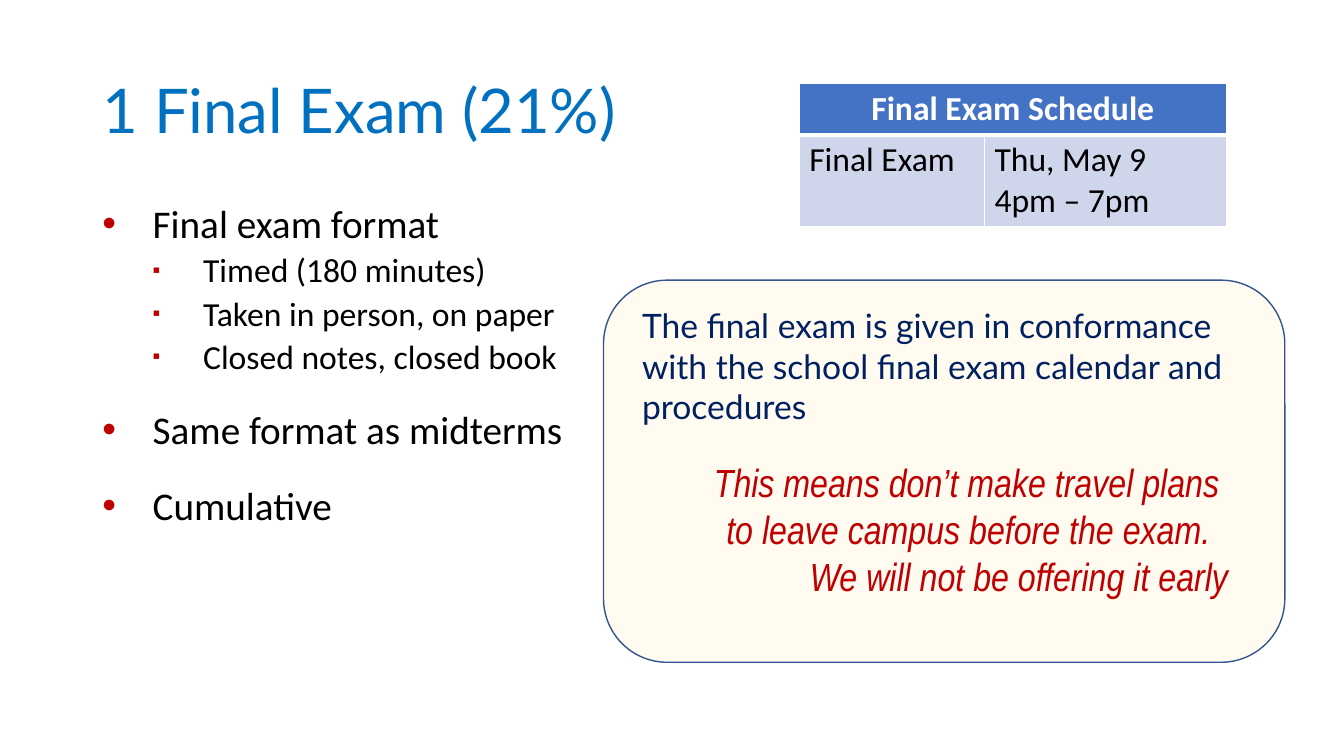
import pptx
import pptx.util
import pptx.dml.color
import pptx.enum.shapes
import pptx.enum.text
import pptx.oxml
import pptx.oxml.ns
import lxml.etree

Cm, Pt = pptx.util.Cm, pptx.util.Pt
RGBColor = pptx.dml.color.RGBColor
ALIGN = pptx.enum.text.PP_ALIGN
ANCHOR = pptx.enum.text.MSO_ANCHOR
AUTO_SIZE = pptx.enum.text.MSO_AUTO_SIZE
qn = pptx.oxml.ns.qn

BLUE = RGBColor(0x00, 0x70, 0xC0)
NAVY = RGBColor(0x00, 0x20, 0x60)
RED = RGBColor(0xC0, 0x00, 0x00)
BLACK = RGBColor(0x00, 0x00, 0x00)
WHITE = RGBColor(0xFF, 0xFF, 0xFF)
HEADER_FILL = RGBColor(0x44, 0x72, 0xC4)
ROW_FILL = RGBColor(0xCF, 0xD5, 0xEA)
CREAM = RGBColor(0xFF, 0xF2, 0xCC)
OUTLINE = RGBColor(0x32, 0x54, 0x91)


def write(tf, lines, color, font, para={}):
    """Fill a text frame with one paragraph per line, all in one format."""
    for i, line in enumerate(lines):
        p = tf.paragraphs[0] if i == 0 else tf.add_paragraph()
        for name, value in para.items():
            setattr(p, name, value)
        r = p.add_run()
        r.text = line
        r.font.color.rgb = color
        for name, value in font.items():
            setattr(r.font, name, value)


def add(parent, tag, **attrs):
    """Append a drawing element to an XML parent."""
    return lxml.etree.SubElement(parent, qn(tag), attrs)


prs = pptx.Presentation()
prs.slide_width, prs.slide_height = Cm(33.87), Cm(19.05)
s = prs.slides.add_slide(prs.slide_layouts[5])

# Title
title = s.shapes.title
title.left, title.top, title.width, title.height = Cm(2.33), Cm(1.02), Cm(16.33), Cm(3.68)
tf = title.text_frame
tf.auto_size = AUTO_SIZE.NONE
tf.vertical_anchor = ANCHOR.MIDDLE
write(tf, ["1 Final Exam (21%)"], BLUE, {"name": "Lato", "size": Pt(44)},
      {"alignment": ALIGN.LEFT, "line_spacing": 0.9})

# Bulleted list: level and text
points = [
    (0, "Final exam format"),
    (1, "Timed (180 minutes)"),
    (1, "Taken in person, on paper"),
    (1, "Closed notes, closed book"),
    (0, "Same format as midterms"),
    (0, "Cumulative"),
]
levels = [
    {"size": 28, "before": 24, "bullet": "•", "scale": 100},
    {"size": 24, "before": 5, "bullet": "▪", "scale": 65},
]
tf = s.shapes.add_textbox(Cm(2.33), Cm(4.42), Cm(29.21), Cm(9.63)).text_frame
tf.word_wrap = True
tf.vertical_anchor = ANCHOR.MIDDLE
write(tf, [text for level, text in points], BLACK, {"name": "Calibri"}, {"line_spacing": 0.9})
for p, (level, text) in zip(tf.paragraphs, points):
    style = levels[level]
    p.level = level
    p.space_before = Pt(style["before"])
    p.runs[0].font.size = Pt(style["size"])
    pPr = p._p.get_or_add_pPr()
    pPr.set("marL", str(Cm(1.27) * (level + 1)))
    pPr.set("indent", str(-Cm(1.27)))
    add(add(pPr, "a:buClr"), "a:srgbClr", val=str(RED))
    add(pPr, "a:buSzPct", val=str(style["scale"] * 1000))
    add(pPr, "a:buFont", typeface="Arial")
    add(pPr, "a:buChar", char=style["bullet"])

# Exam schedule table
table = s.shapes.add_table(2, 2, Cm(20.14), Cm(2.11), Cm(10.77), Cm(3.6)).table
for column, width in zip(table.columns, (4.67, 6.1)):
    column.width = Cm(width)
for row, height in zip(table.rows, (1.29, 2.31)):
    row.height = Cm(height)
table.cell(0, 0).merge(table.cell(0, 1))
schedule = [
    [["Final Exam Schedule"], []],
    [["Final Exam"], ["Thu, May 9", "4pm – 7pm"]],
]
for i, row in enumerate(schedule):
    header = i == 0
    for j, lines in enumerate(row):
        cell = table.cell(i, j)
        write(cell.text_frame, lines, WHITE if header else BLACK,
              {"name": "Calibri", "size": Pt(24), "bold": header},
              {"alignment": ALIGN.CENTER if header else ALIGN.LEFT})
        tcPr = cell._tc.get_or_add_tcPr()
        for side in "LRTB":
            thick = side == ("B" if header else "T")
            ln = add(tcPr, "a:ln" + side, w=str(Pt(3 if thick else 1)))
            add(add(ln, "a:solidFill"), "a:srgbClr", val=str(WHITE))
        cell.fill.solid()
        cell.fill.fore_color.rgb = HEADER_FILL if header else ROW_FILL

# Notice panel
sp = s.shapes.add_shape(pptx.enum.shapes.MSO_SHAPE.ROUNDED_RECTANGLE,
                        Cm(15.21), Cm(7.06), Cm(17.17), Cm(9.63))
sp.shadow.inherit = False
sp.fill.solid()
sp.fill.fore_color.rgb = CREAM
add(sp._element.spPr.find(qn("a:solidFill"))[0], "a:alpha", val="26000")
sp.line.color.rgb = OUTLINE
sp.line.width = Pt(1)

# Notice texts
policy = ["The final exam is given in conformance with the school final exam calendar and procedures"]
warning = [
    "This means don’t make travel plans ",
    "to leave campus before the exam.  ",
    "We will not be offering it early",
]
notices = [
    (15.93, 7.57, 3.33, policy, NAVY, {"name": "Lato", "size": Pt(24)}, ALIGN.LEFT),
    (15.57, 11.43, 3.84, warning, RED,
     {"name": "Arial Narrow", "size": Pt(28), "italic": True}, ALIGN.RIGHT),
]
for left, top, height, lines, color, font, align in notices:
    tf = s.shapes.add_textbox(Cm(left), Cm(top), Cm(15.62), Cm(height)).text_frame
    tf.word_wrap = True
    tf.auto_size = AUTO_SIZE.SHAPE_TO_FIT_TEXT
    write(tf, lines, color, font, {"alignment": align})

prs.save("out.pptx")
